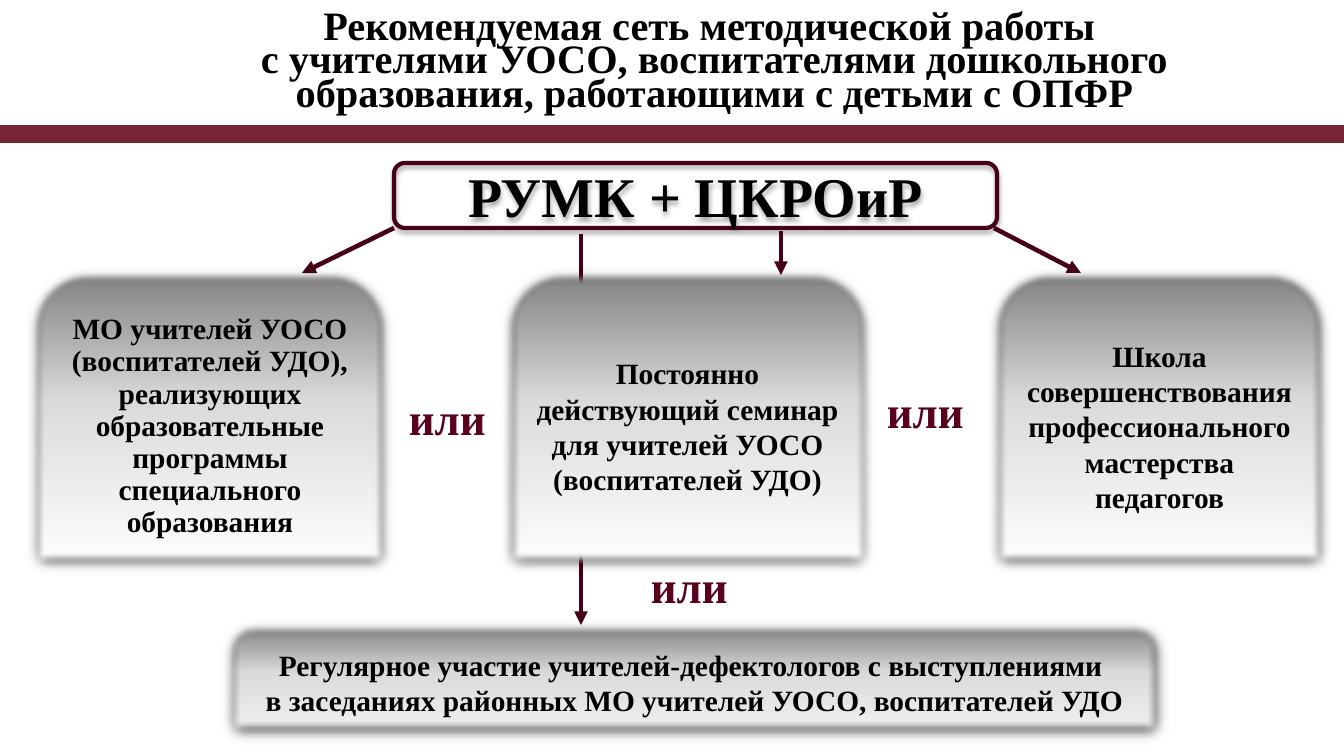
from lxml.etree import SubElement
from pptx import Presentation
from pptx.dml.color import RGBColor
from pptx.enum.shapes import MSO_CONNECTOR as Line, MSO_SHAPE as Shape
from pptx.enum.text import MSO_ANCHOR as Anchor, MSO_AUTO_SIZE as Fit, PP_ALIGN as Align
from pptx.oxml.ns import qn
from pptx.util import Emu, Pt

EMU_PER_PX = 12192000 / 1344


def px(length):
    return Emu(round(length * EMU_PER_PX))


def color(value):
    return RGBColor.from_string(value)


def node(parent, tag, **attributes):
    return SubElement(parent, qn(tag), {key: str(value) for key, value in attributes.items()})


def write(shape, text, size=21, ink="000000", align=Align.CENTER,
          anchor=Anchor.MIDDLE, spacing=None, fit=Fit.NONE):
    frame = shape.text_frame
    frame.text = text
    frame.word_wrap = True
    frame.vertical_anchor = anchor
    frame.auto_size = fit
    for paragraph in frame.paragraphs:
        paragraph.alignment = align
        if spacing:
            paragraph.line_spacing = Pt(spacing)
        for run in paragraph.runs:
            run.font.name = "Times New Roman"
            run.font.size = Pt(size)
            run.font.bold = True
            run.font.color.rgb = color(ink)


class MethodSlide:
    band = "752536"
    dark = "460017"
    accent = "58001D"

    def __init__(self, deck):
        self.slide = deck.slides.add_slide(deck.slide_layouts[5])
        self.shapes = self.slide.shapes

    def title(self, text, left, top, width, height):
        heading = self.shapes.title
        heading.left, heading.top = px(left), px(top)
        heading.width, heading.height = px(width), px(height)
        write(heading, text, size=28.8, spacing=24)

    def line(self, x1, y1, x2, y2, ink=dark, weight=3.25, arrow=True):
        connector = self.shapes.add_connector(Line.STRAIGHT, px(x1), px(y1), px(x2), px(y2))
        connector.line.color.rgb = color(ink)
        connector.line.width = Pt(weight)
        if arrow:
            node(connector.line._get_or_add_ln(), "a:tailEnd", type="triangle")
        node(connector._element.spPr, "a:effectLst")

    def shape(self, preset, left, top, width, height, blur, distance, opacity):
        shape = self.shapes.add_shape(preset, px(left), px(top), px(width), px(height))
        shape.shadow.inherit = False
        effects = shape._element.spPr.find(qn("a:effectLst"))
        shadow = node(effects, "a:outerShdw", blurRad=Pt(blur), dist=Pt(distance),
                      dir=5400000, algn="t", rotWithShape=0)
        black = node(shadow, "a:srgbClr", val="000000")
        node(black, "a:alpha", val=opacity * 1000)
        return shape, effects

    def option(self, text, left, top, width, height, spacing=None, base="FFFFFF"):
        card, effects = self.shape(Shape.ROUND_2_SAME_RECTANGLE, left, top, width, height,
                                   blur=8.5, distance=1, opacity=100)
        node(effects, "a:softEdge", rad=Pt(5))
        card.line.fill.background()
        card.fill.gradient()
        card.fill.gradient_angle = 90
        stops = card._element.spPr.find(qn("a:gradFill")).find(qn("a:gsLst"))
        for stop in list(stops):
            stops.remove(stop)
        for percent, shade in ((0, base), (57, "D9D9D9"), (100, "808080")):
            node(node(stops, "a:gs", pos=percent * 1000), "a:srgbClr", val=shade)
        write(card, text, spacing=spacing)

    def source(self, text, left, top, width, height):
        frame, _ = self.shape(Shape.ROUNDED_RECTANGLE, left, top, width, height,
                              blur=3.5, distance=2.2, opacity=32)
        frame.fill.background()
        frame.line.color.rgb = color(self.dark)
        frame.line.width = Pt(3)
        write(frame, text, size=40)

    def either(self, left, top):
        label = self.shapes.add_textbox(px(left), px(top), px(108), px(64))
        write(label, "или", size=32, ink=self.accent, align=Align.LEFT,
              anchor=Anchor.TOP, fit=Fit.SHAPE_TO_FIT_TEXT)


def main():
    deck = Presentation()
    deck.slide_width, deck.slide_height = px(1344), px(756)
    network = MethodSlide(deck)

    # Heading and band
    network.title("Рекомендуемая сеть методической работы \v"
                  "с учителями УОСО, воспитателями дошкольного образования, "
                  "работающими с детьми с ОПФР", 135, 25, 1159, 80)
    network.line(0, 134, 1358, 134, ink=network.band, weight=12.75, arrow=False)

    # Arrows that run behind the options
    network.line(581, 234, 581, 625)
    network.line(394, 228, 302, 273)

    # Options
    network.option("МО учителей УОСО\n(воспитателей УДО),\nреализующих образовательные "
                   "программы специального образования", 33, 273, 354, 292, spacing=23)
    network.option("Постоянно действующий семинар для учителей УОСО\n(воспитателей УДО)",
                   507, 273, 361, 292)
    network.option("Школа совершенствования профессионального мастерства педагогов",
                   994, 273, 331, 292)
    network.option("Регулярное участие учителей-дефектологов с выступлениями \n"
                   "в заседаниях районных МО учителей УОСО, воспитателей УДО",
                   229, 626, 931, 107, base="F2F2F2")
    for left, top in ((399, 386), (877, 379), (641, 554)):
        network.either(left, top)

    # Source of the network and its front arrows
    network.source("РУМК + ЦКРОиР", 394, 163, 603, 65)
    network.line(781, 231, 781, 275)
    network.line(994, 228, 1081, 273)

    deck.save("out.pptx")


if __name__ == "__main__":
    main()
